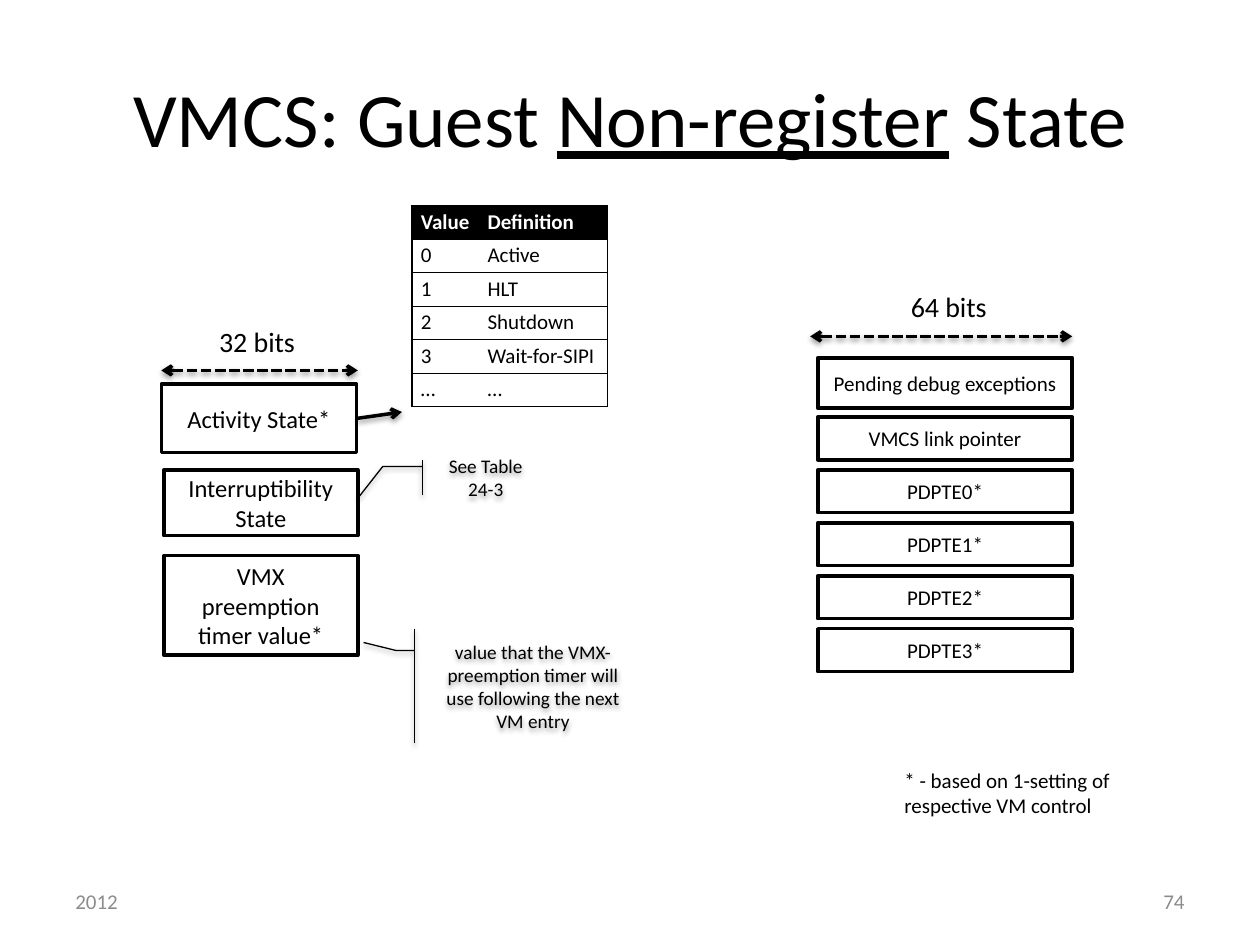
from dataclasses import dataclass

import pptx
import pptx.dml.color
import pptx.enum.dml
import pptx.enum.shapes
import pptx.enum.text
import pptx.oxml
import pptx.oxml.ns
import pptx.util
from pptx.util import Inches

BLACK, WHITE, GREY = "000000", "FFFFFF", "8C8C8C"
ALIGN = pptx.enum.text.PP_ALIGN
ANCHOR = pptx.enum.text.MSO_ANCHOR
SHAPE = pptx.enum.shapes.MSO_SHAPE
SPACE = pptx.oxml.ns.nsdecls("a")
GLOW = (
    f'<a:effectLst {SPACE}><a:outerShdw blurRad="39370" dist="20320" dir="5400000" '
    'rotWithShape="0"><a:srgbClr val="000000"><a:alpha val="38000"/></a:srgbClr>'
    "</a:outerShdw></a:effectLst>"
)


@dataclass
class Box:
    text: str
    left: float
    top: float
    width: float
    height: float
    size: float = 12


@dataclass
class Arrow:
    start: tuple[float, float]
    end: tuple[float, float]
    double: bool = False


@dataclass
class Callout:
    box: Box
    bends: tuple[float, ...]


def color(code: str):
    return pptx.dml.color.RGBColor.from_string(code)


def set_all(item, values: dict) -> None:
    for name, value in values.items():
        setattr(item, name, value)


def lengths(box: Box) -> list:
    return [Inches(n) for n in (box.left, box.top, box.width, box.height)]


def add_run(para, text: str, size: float, code: str = BLACK, **extra) -> None:
    run = para.add_run()
    run.text = text
    set_all(run.font, {"name": "Calibri", "size": pptx.util.Pt(size), **extra})
    run.font.color.rgb = color(code)


def set_line(line, width: float) -> None:
    line.color.rgb = color(BLACK)
    line.width = pptx.util.Pt(width)


def add_label(slide, box: Box, code: str = BLACK, align=ALIGN.LEFT,
              anchor=ANCHOR.TOP, wrap: bool = True):
    frame = slide.shapes.add_textbox(*lengths(box)).text_frame
    set_all(frame, {"word_wrap": wrap, "vertical_anchor": anchor})
    para = frame.paragraphs[0]
    para.alignment = align
    if box.text:
        add_run(para, box.text, box.size, code)
    return para


def add_shape(slide, kind, box: Box, weight: float):
    shape = slide.shapes.add_shape(kind, *lengths(box))
    set_line(shape.line, weight)
    set_all(shape.text_frame, {"word_wrap": True, "vertical_anchor": ANCHOR.MIDDLE})
    para = shape.text_frame.paragraphs[0]
    para.alignment = ALIGN.CENTER
    add_run(para, box.text, box.size)
    return shape


def add_box(slide, box: Box) -> None:
    shape = add_shape(slide, SHAPE.RECTANGLE, box, 2)
    shape.fill.solid()
    shape.fill.fore_color.rgb = color(WHITE)
    shape.shadow.inherit = False


def add_callout(slide, note: Callout) -> None:
    shape = add_shape(slide, SHAPE.LINE_CALLOUT_2_ACCENT_BAR, note.box, 0.75)
    shape.fill.background()
    for spot, bend in enumerate(note.bends):
        shape.adjustments[spot] = bend
    shape._element.spPr.append(pptx.oxml.parse_xml(GLOW))


def add_arrow(slide, arrow: Arrow) -> None:
    ends = [Inches(n) for n in arrow.start + arrow.end]
    link = slide.shapes.add_connector(pptx.enum.shapes.MSO_CONNECTOR.STRAIGHT, *ends)
    set_line(link.line, 2)
    tips = ["tailEnd"]
    if arrow.double:
        link.line.dash_style = pptx.enum.dml.MSO_LINE.SQUARE_DOT
        tips = ["headEnd", "tailEnd"]
    props = link._element.spPr
    for tip in tips:
        props.ln.append(pptx.oxml.parse_xml(f'<a:{tip} {SPACE} type="arrow"/>'))
    props.append(pptx.oxml.parse_xml(GLOW))


def set_edge(cell, side: str, shown: bool) -> None:
    paint = f'<a:solidFill><a:srgbClr val="{BLACK}"/></a:solidFill>' if shown else "<a:noFill/>"
    cell._tc.get_or_add_tcPr().append(
        pptx.oxml.parse_xml(f'<a:ln{side} {SPACE} w="9525">{paint}</a:ln{side}>'))


def add_table(slide, rows: list, widths: list, place: Box) -> None:
    table = slide.shapes.add_table(len(rows), len(widths), *lengths(place)).table
    set_all(table, {"first_row": False, "horz_banding": False})
    for col, width in zip(table.columns, widths):
        col.width = Inches(width)
    margins = {"margin_left": Inches(0.07), "margin_right": Inches(0.07),
               "margin_top": Inches(0.03), "margin_bottom": Inches(0.03)}
    for r, row in enumerate(rows):
        head = r == 0
        for c, text in enumerate(row):
            cell = table.cell(r, c)
            set_all(cell, margins)
            edges = {"L": c == 0, "R": c == len(row) - 1, "T": True, "B": True}
            for side, shown in edges.items():
                set_edge(cell, side, shown)
            cell.fill.solid()
            cell.fill.fore_color.rgb = color(BLACK if head else WHITE)
            add_run(cell.text_frame.paragraphs[0], text, place.size,
                    WHITE if head else BLACK, bold=head)


def main() -> None:
    deck = pptx.Presentation()
    set_all(deck, {"slide_width": Inches(10), "slide_height": Inches(7.5)})
    slide = deck.slides.add_slide(deck.slide_layouts[6])

    # Title and footer
    title = add_label(slide, Box("", 0.5, 0.3, 9, 1.25), align=ALIGN.CENTER,
                      anchor=ANCHOR.MIDDLE)
    for text, under in (("VMCS: Guest ", False), ("Non-register", True), (" State", False)):
        add_run(title, text, 44, underline=under)
    for text, left, align in (("2012", 0.5, ALIGN.LEFT), ("74", 7.17, ALIGN.RIGHT)):
        add_label(slide, Box(text, left, 6.95, 2.33, 0.4), GREY, align, ANCHOR.MIDDLE)

    # Fields of 32 bits on the left, 64 bits on the right
    fields = [
        Box("Activity State*", 1.28, 3.05, 1.55, 0.54, 14),
        Box("Interruptibility State", 1.3, 3.73, 1.54, 0.52, 14),
        Box("VMX preemption timer value*", 1.3, 4.41, 1.54, 0.79, 14),
        Box("Pending debug exceptions", 6.49, 2.84, 2.02, 0.4),
    ]
    names = ["VMCS link pointer"] + [f"PDPTE{n}*" for n in range(4)]
    fields += [Box(name, 6.49, 3.31 + 0.42 * n, 2.02, 0.34) for n, name in enumerate(names)]
    for field in fields:
        add_box(slide, field)

    # Width marks and the link to the table
    for arrow in (Arrow((1.28, 2.94), (2.84, 2.94), True),
                  Arrow((6.43, 2.67), (8.51, 2.67), True),
                  Arrow((2.84, 3.32), (3.19, 3.27))):
        add_arrow(slide, arrow)
    for text, left, top in (("32 bits", 1.64, 2.53), ("64 bits", 7.13, 2.25)):
        add_label(slide, Box(text, left, top, 0.81, 0.37, 16), wrap=False)

    # Activity values
    rows = [("Value", "Definition"), ("0", "Active"), ("1", "HLT"),
            ("2", "Shutdown"), ("3", "Wait-for-SIPI"), ("…", "…")]
    add_table(slide, rows, [0.53, 1.02], Box("", 3.27, 1.63, 1.55, 1.6))

    # Notes
    add_label(slide, Box("* - based on 1-setting of respective VM control",
                         7.08, 6.04, 2.1, 0.5))
    timer = "value that the VMX-preemption timer will use following the next VM entry"
    for note in (
        Callout(Box(timer, 3.42, 4.99, 1.62, 0.91, 11), (0.19, -0.08, 0.19, -0.17, 0.12, -0.33)),
        Callout(Box("See Table 24-3", 3.42, 3.65, 0.87, 0.28, 11),
                (0.19, -0.08, 0.19, -0.44, 1.1, -0.67)),
    ):
        add_callout(slide, note)

    deck.save("out.pptx")


if __name__ == "__main__":
    main()
